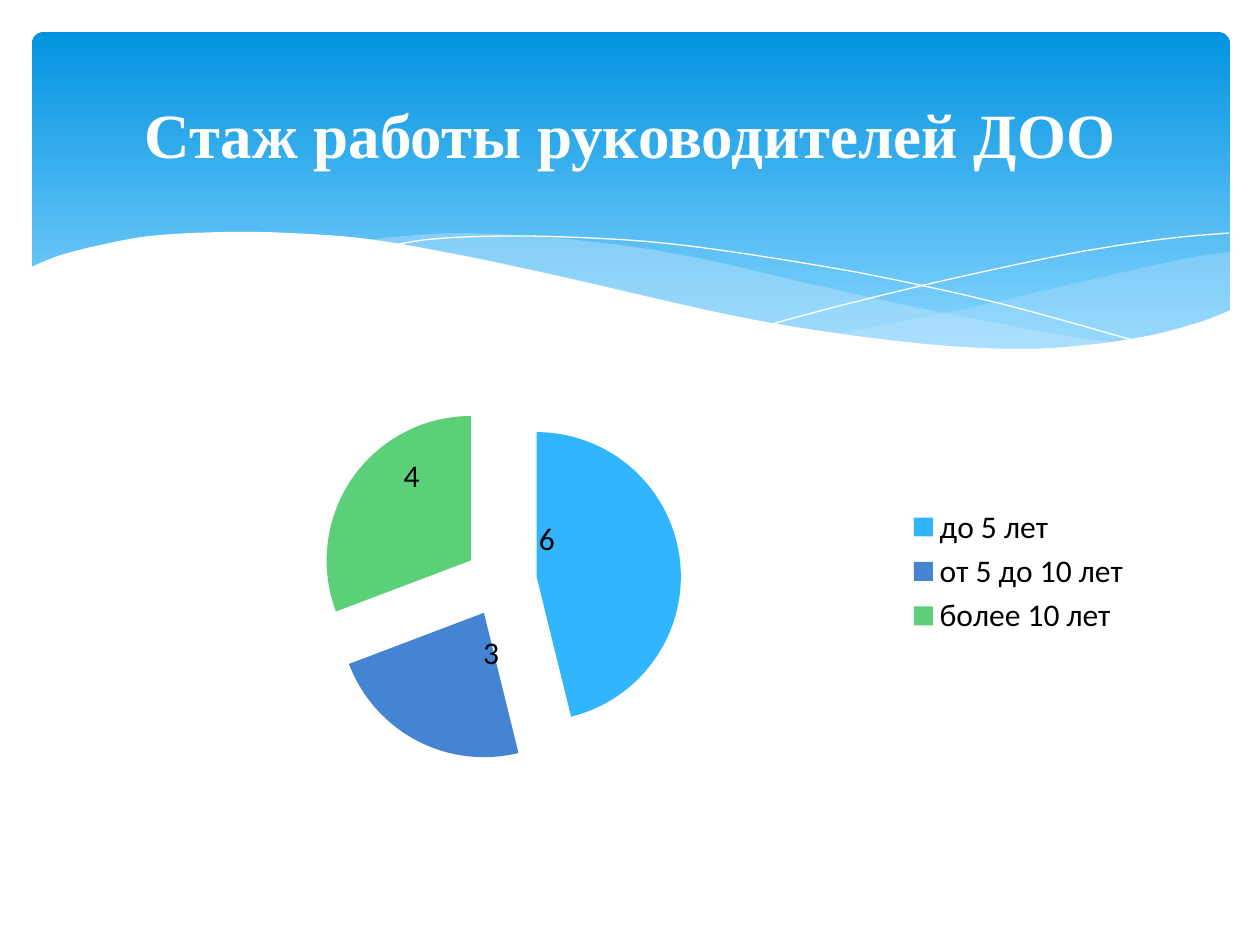
from pptx import Presentation, util as u
from pptx.chart.data import CategoryChartData
from pptx.dml.color import RGBColor
from pptx.enum import chart as ch, shapes, text
from pptx.oxml import parse_xml
from pptx.oxml.ns import nsdecls, qn

PX = 914400 / 126


def px(n):
    return u.Emu(round(n * PX))


def rgb(value):
    return RGBColor.from_string(value)


def assign(target, values):
    for name, value in values.items():
        setattr(target, name, value)


def smooth(points, steps=6):
    """Sample a Catmull-Rom curve running through the points."""
    ends = [points[0], *points, points[-1]]
    out = [points[0]]
    for a, b, c, d in zip(ends, ends[1:], ends[2:], ends[3:]):
        for k in range(1, steps + 1):
            t = k / steps
            out.append(tuple(
                (2 * q + (r - p) * t + (2 * p - 5 * q + 4 * r - w) * t ** 2
                 + (3 * q - p - 3 * r + w) * t ** 3) / 2
                for p, q, r, w in zip(a, b, c, d)))
    return out


def manual_layout(x, y, **extra):
    """Chart layout in fractions of the chart's size."""
    values = {**extra, "x": x, "y": y}
    order = ("layoutTarget", "xMode", "yMode", "x", "y", "w", "h")
    items = "".join(f'<c:{n} val="{values[n]}"/>' for n in order if n in values)
    return parse_xml(f'<c:layout {nsdecls("c")}><c:manualLayout>{items}'
                     '</c:manualLayout></c:layout>')


class Deck:
    title_font = dict(name="Times New Roman", size=u.Pt(36), bold=True)
    chart_font = dict(name="Calibri", size=u.Pt(18))
    white, black = "FFFFFF", "000000"
    slices = ["31B6FD", "4584D3", "5BD078"]

    def __init__(self):
        self.prs = Presentation()
        assign(self.prs, dict(slide_width=u.Inches(10), slide_height=u.Inches(7.5)))
        self.s = self.prs.slides.add_slide(self.prs.slide_layouts[5])

    def band(self, x, y, w, h, top, bottom):
        sp = self.s.shapes.add_shape(shapes.MSO_SHAPE.ROUNDED_RECTANGLE,
                                     px(x), px(y), px(w), px(h))
        sp.adjustments[0] = 0.034
        sp.shadow.inherit = False
        sp.line.fill.background()
        sp.fill.gradient()
        sp.fill.gradient_angle = 270
        for stop, color, position in zip(sp.fill.gradient_stops, (top, bottom), (0, 0.9)):
            stop.color.rgb = rgb(color)
            stop.position = position

    def outline(self, points, close):
        tenths = [(x * 10, y * 10) for x, y in points]
        fb = self.s.shapes.build_freeform(*tenths[0], scale=PX / 10)
        fb.add_line_segments(tenths[1:], close=close)
        sp = fb.convert_to_shape()
        sp.shadow.inherit = False
        return sp

    def area(self, points, color, alpha=100):
        sp = self.outline(points, True)
        sp.line.fill.background()
        sp.fill.solid()
        sp.fill.fore_color.rgb = rgb(color)
        clr = sp.fill._xPr.find(".//" + qn("a:srgbClr"))
        clr.append(parse_xml(f'<a:alpha {nsdecls("a")} val="{alpha * 1000}"/>'))

    def hairline(self, points):
        sp = self.outline(smooth(points), False)
        sp.fill.background()
        sp.line.color.rgb = rgb(self.white)
        sp.line.width = u.Pt(0)

    def title(self, words, x, y, w, h):
        sp = self.s.shapes.title
        assign(sp, dict(left=px(x), top=px(y), width=px(w), height=px(h)))
        tf = sp.text_frame
        tf.vertical_anchor = text.MSO_ANCHOR.MIDDLE
        p = tf.paragraphs[0]
        p.alignment = text.PP_ALIGN.CENTER
        r = p.add_run()
        r.text = words
        assign(r.font, self.title_font)
        r.font.color.rgb = rgb(self.white)
        self.s.shapes._spTree.append(sp._element)  # bring to front

    def pie(self, x, y, w, h, values, plot, shifts, explosion):
        data = CategoryChartData()
        data.categories = list(values)
        data.add_series("Series 1", list(values.values()))
        chart = self.s.shapes.add_chart(ch.XL_CHART_TYPE.PIE, px(x), px(y),
                                        px(w), px(h), data).chart
        assign(chart, dict(has_title=False, has_legend=True))
        assign(chart.font, self.chart_font)
        chart.font.color.rgb = rgb(self.black)
        assign(chart.legend, dict(position=ch.XL_LEGEND_POSITION.RIGHT,
                                  include_in_layout=False))
        # Plot area
        area = chart._chartSpace.chart.plotArea
        for old in area.findall(qn("c:layout")):
            area.remove(old)
        area.insert(0, manual_layout(**plot))
        # Slices and their shifted labels
        chart.plots[0].vary_by_categories = True
        series = chart.plots[0].series[0]
        assign(series.data_labels, dict(show_value=True))
        for i, (color, (dx, dy)) in enumerate(zip(self.slices, shifts)):
            point = series.points[i]
            point.format.fill.solid()
            point.format.fill.fore_color.rgb = rgb(color)
            point.data_label.position = ch.XL_LABEL_POSITION.CENTER
            label = series.data_labels._element.findall(qn("c:dLbl"))[i]
            label.insert(1, manual_layout(round(dx / w, 2), round(dy / h, 2)))
        series._element.find(qn("c:dPt")).addprevious(
            parse_xml(f'<c:explosion {nsdecls("c")} val="{explosion}"/>'))


def main():
    d = Deck()

    # Blue header band
    d.band(32, 32, 1198, 340, "0293E0", "83D3FE")

    # Translucent ribbons: upper edge, then lower edge
    d.area(smooth([(1230, 252), (1194, 257), (1142, 268), (1085, 281), (982, 305),
                   (890, 324), (833, 334)])
           + smooth([(833, 334), (906, 343), (984, 349), (1038, 349), (1110, 344),
                     (1160, 334), (1196, 324), (1230, 311)]), "C6E7FC", 29)
    d.area(smooth([(1125, 344), (1055, 334), (934, 311), (842, 291), (793, 280),
                   (717, 262), (648, 249), (586, 241), (529, 236), (455, 233),
                   (394, 237), (360, 241)])
           + smooth([(360, 241), (431, 251), (509, 266), (566, 280), (668, 302),
                     (757, 321), (838, 335), (910, 345), (974, 349), (1031, 350),
                     (1080, 349), (1125, 344)]), "C6E7FC", 40)

    # Crossing hairlines
    d.hairline([(389, 246), (433, 239), (505, 236), (591, 238), (672, 244),
                (766, 257), (876, 276), (1002, 304), (1143, 343)])
    d.hairline([(772, 324), (847, 304), (942, 281), (1053, 257), (1128, 244),
                (1182, 237), (1229, 233)])

    # White wave that cuts the header
    d.area(smooth([(1231, 310), (1197, 323), (1147, 336), (1087, 345), (1019, 349),
                   (937, 345), (842, 334), (730, 315), (563, 277), (460, 255),
                   (368, 239), (290, 233), (223, 232), (150, 236), (96, 246),
                   (58, 256), (29, 268)]) + [(29, 415), (1231, 415)], d.white)

    # Pie of length of service
    d.pie(123, 334, 1021, 475,
          {"до 5 лет": 6, "от 5 до 10 лет": 3, "более 10 лет": 4},
          plot=dict(layoutTarget="inner", xMode="edge", yMode="edge",
                    x=0.07, y=0.14, w=0.6, h=0.76),
          shifts=[(-57, -28), (45, -25), (3, -45)], explosion=25)

    d.title("Стаж работы руководителей ДОО", 63, 47, 1134, 173)
    d.prs.save("out.pptx")


if __name__ == "__main__":
    main()
